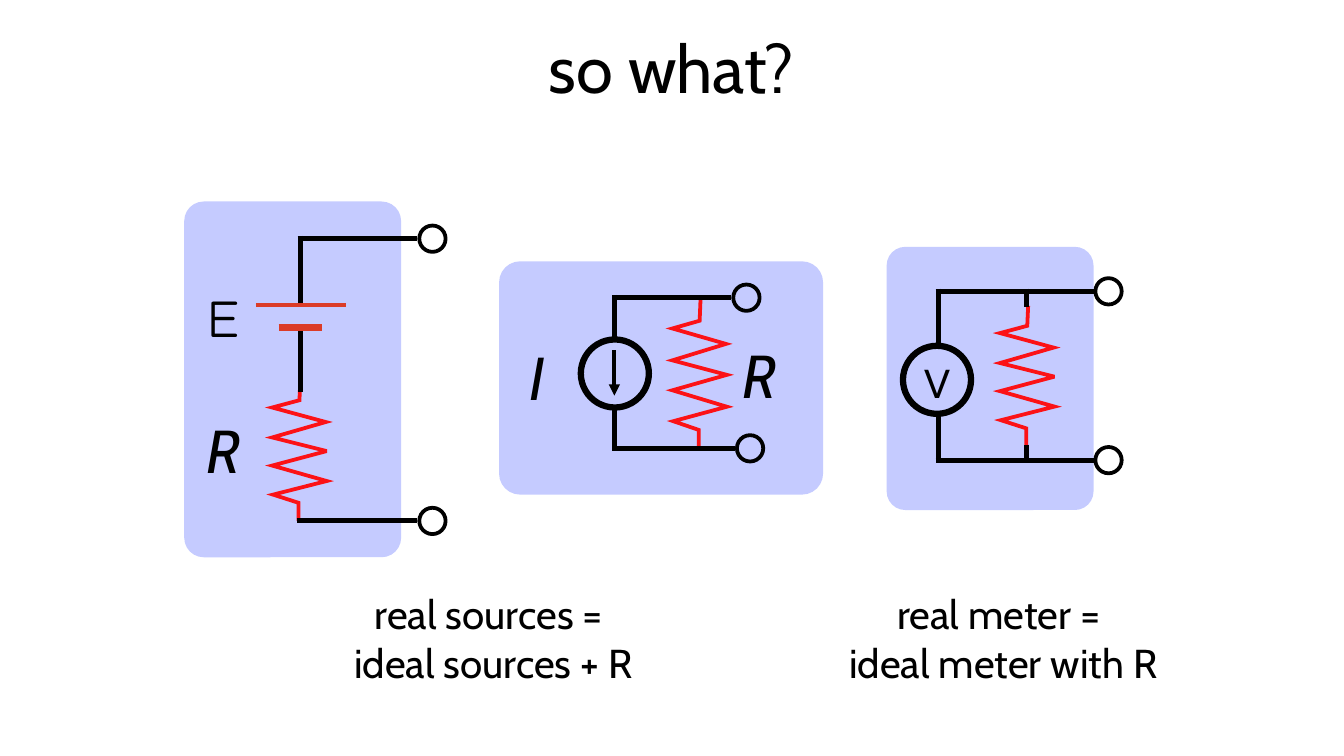
from lxml.etree import SubElement
from pptx import Presentation
from pptx.dml.color import RGBColor
from pptx.enum.shapes import MSO_CONNECTOR as Connector, MSO_SHAPE as Shape
from pptx.enum.text import MSO_ANCHOR as Anchor, MSO_AUTO_SIZE as AutoSize, PP_ALIGN as Align
from pptx.oxml.ns import qn
from pptx.util import Inches, Pt

COLORS = {"ink": "000000", "panel": "2F45FF", "resistor": "FC1216", "battery": "DB3C28"}
ZIGZAG = [(0.31, 0), (0.3, 0.22), (0, 0.3), (0.59, 0.46), (0, 0.63), (0.6, 0.78),
          (0, 0.94), (0.6, 1.11), (0.01, 1.26), (0.29, 1.35), (0.29, 1.55)]
TERMINAL = 0.29
METER = 0.75
SYMBOL = {"size": Pt(48), "italic": True}


def color(name):
    return RGBColor.from_string(COLORS[name])


def style_line(shape, name, width):
    shape.line.color.rgb = color(name)
    shape.line.width = Pt(width)


def add_text(shapes, place, lines, wrap=False, inset=0.06, **font):
    box = shapes.add_textbox(*map(Inches, place))
    frame = box.text_frame
    margins = {f"margin_{side}": Inches(inset) for side in ("left", "top", "right", "bottom")}
    layout = {"word_wrap": wrap, "vertical_anchor": Anchor.MIDDLE,
              "auto_size": AutoSize.NONE if wrap else AutoSize.SHAPE_TO_FIT_TEXT}
    for key, value in {**margins, **layout}.items():
        setattr(frame, key, value)
    for index, line in enumerate(lines):
        para = frame.add_paragraph() if index else frame.paragraphs[0]
        para.alignment = Align.CENTER
        span = para.add_run()
        span.text = line
        for key, value in {"name": "Cabin", **font}.items():
            setattr(span.font, key, value)
        span.font.color.rgb = color("ink")


def add_panel(shapes, place):
    panel = shapes.add_shape(Shape.ROUNDED_RECTANGLE, *map(Inches, place))
    panel.shadow.inherit = False
    panel.adjustments[0] = 0.09
    panel.fill.solid()
    panel.fill.fore_color.rgb = color("panel")
    tint = panel.fill._xPr.find(".//" + qn("a:srgbClr"))
    SubElement(tint, qn("a:alpha"), val="28000")
    panel.line.fill.background()


def add_circle(shapes, left, top, size, width):
    circle = shapes.add_shape(Shape.OVAL, *map(Inches, (left, top, size, size)))
    circle.shadow.inherit = False
    circle.fill.background()
    style_line(circle, "ink", width)


def add_wire(shapes, start, end, name="ink", width=4):
    wire = shapes.add_connector(Connector.STRAIGHT, *map(Inches, (*start, *end)))
    style_line(wire, name, width)
    SubElement(wire._element.spPr, qn("a:effectLst"))
    return wire


def add_arrow(shapes, start, end):
    arrow = add_wire(shapes, start, end, width=3)
    SubElement(arrow.line._get_or_add_ln(), qn("a:tailEnd"), type="triangle")


def add_resistor(shapes, left, top, height=1.55):
    stretch = height / 1.55
    points = [(Inches(left + x), Inches(top + y * stretch)) for x, y in ZIGZAG]
    builder = shapes.build_freeform(*points[0])
    builder.add_line_segments(points[1:], close=False)
    resistor = builder.convert_to_shape()
    resistor.shadow.inherit = False
    resistor.fill.background()
    style_line(resistor, "resistor", 3)
    SubElement(resistor.line._get_or_add_ln(), qn("a:miter"), lim="400000")


def add_lead(shapes, start, end, y):
    add_wire(shapes, (start, y), (end, y))
    add_circle(shapes, end + 0.02, y - TERMINAL / 2, TERMINAL, 3)


def draw_voltage_source(shapes):
    add_panel(shapes, (2.03, 2.22, 2.39, 3.92))
    add_resistor(shapes, 3, 4.19)
    add_text(shapes, (2.22, 3.08, 0.48, 0.82), ["E"], name="Comic Neue", size=Pt(42))
    for top, bottom in ((2.6, 3.35), (3.63, 4.32)):
        add_wire(shapes, (3.31, top), (3.31, bottom))
    add_wire(shapes, (2.82, 3.36), (3.81, 3.36), "battery", 3)
    add_wire(shapes, (3.07, 3.61), (3.55, 3.61), "battery", 6)
    for start, y in ((3.28, 2.63), (3.27, 5.74)):
        add_lead(shapes, start, 4.6, y)
    add_text(shapes, (2.22, 4.49, 0.47, 0.92), ["R"], **SYMBOL)


def draw_meter(shapes):
    add_panel(shapes, (9.77, 2.72, 2.28, 2.9))
    add_resistor(shapes, 11.02, 3.37)
    for x, top, bottom in ((10.34, 3.18, 3.79), (10.34, 4.57, 5.07),
                           (11.31, 3.18, 3.38), (11.31, 4.9, 5.1)):
        add_wire(shapes, (x, top), (x, bottom))
    for y in (3.21, 5.07):
        add_lead(shapes, 10.31, 12.05, y)
    add_circle(shapes, 9.95, 3.81, METER, 5)
    add_text(shapes, (10.1, 3.89, 0.47, 0.65), ["V"], size=Pt(32))


def draw_current_source(shapes):
    add_panel(shapes, (5.5, 2.88, 3.57, 2.57))
    add_resistor(shapes, 7.41, 3.3, 1.65)
    add_text(shapes, (5.78, 3.69, 0.27, 0.92), ["I"], **SYMBOL)
    for top, bottom in ((3.25, 3.72), (4.48, 4.97)):
        add_wire(shapes, (6.77, top), (6.77, bottom))
    for start, end, y in ((6.75, 8.06, 3.28), (6.77, 8.1, 4.94)):
        add_lead(shapes, start, end, y)
    add_text(shapes, (8.12, 3.66, 0.47, 0.92), ["R"], **SYMBOL)
    add_circle(shapes, 6.4, 3.74, METER, 5)
    add_arrow(shapes, (6.77, 3.86), (6.77, 4.36))


def main():
    deck = Presentation()
    deck.slide_width = Inches(14.81)
    deck.slide_height = Inches(8.33)
    page = deck.slides.add_slide(deck.slide_layouts[6])
    shapes = page.shapes
    add_text(shapes, (2.93, 0.22, 8.94, 1.04), ["so what?"], wrap=True, inset=0.04, size=Pt(53))
    draw_voltage_source(shapes.add_group_shape().shapes)
    captions = {3.49: ["real sources = ", "ideal sources + R"],
                9.11: ["real meter = ", "ideal meter with R"]}
    for left, lines in captions.items():
        add_text(shapes, (left, 6.45, 3.9, 1.16), lines, wrap=True, inset=0.04, size=Pt(32))
    draw_meter(shapes.add_group_shape().shapes)
    draw_current_source(shapes.add_group_shape().shapes)
    deck.save("out.pptx")


if __name__ == "__main__":
    main()
